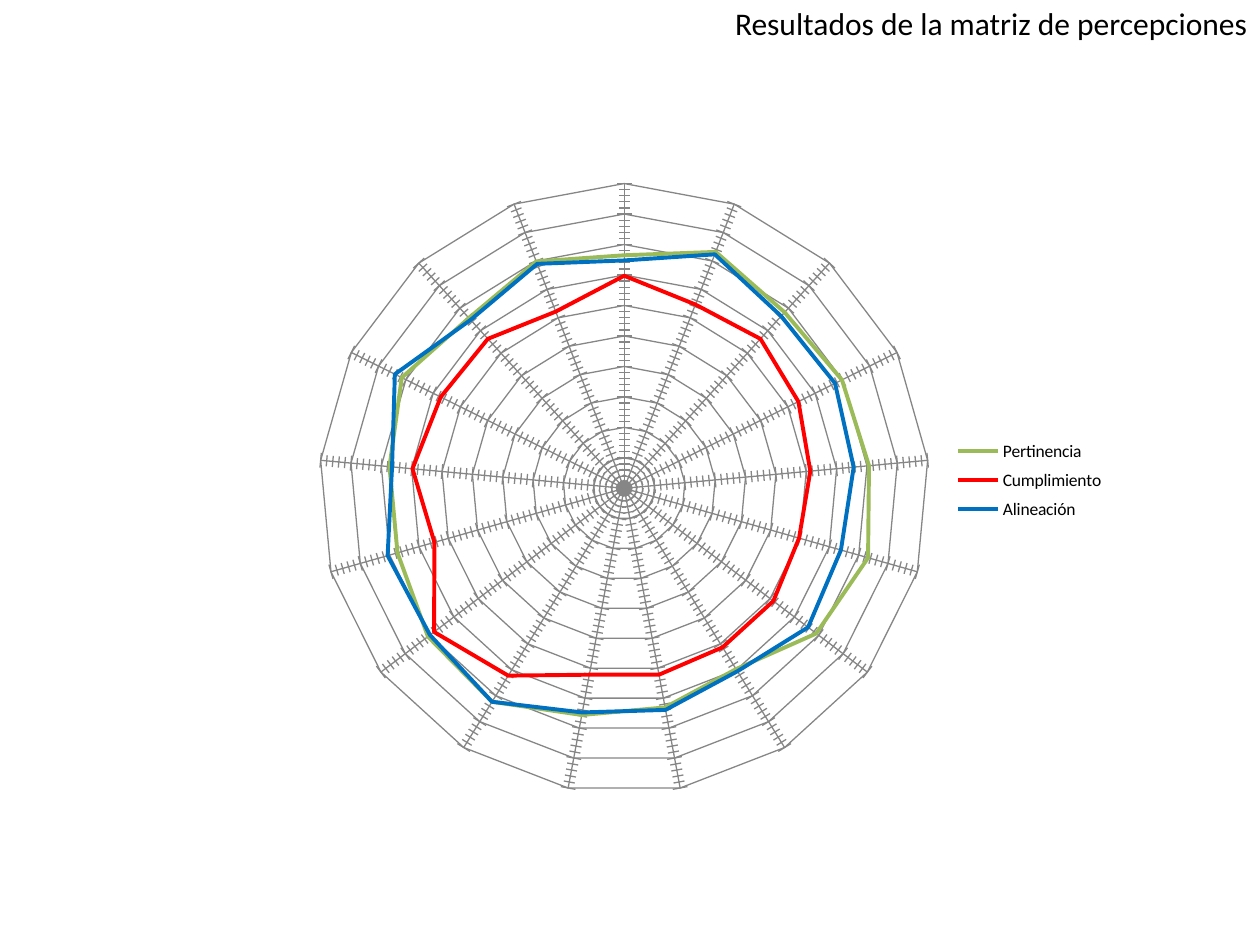
from dataclasses import dataclass

from lxml import etree
from pptx import Presentation
from pptx import util as u
from pptx.chart.data import CategoryChartData
from pptx.dml.color import RGBColor
from pptx.enum import chart as charts, text

WIDTH, HEIGHT = u.Inches(10), u.Inches(7.5)
FONT, BLACK, GRID = "Calibri", "000000", "868686"
MAXIMUM, RINGS, MINOR_PARTS = 119, 10, 5
PLOT_AREA = {"x": 0.212, "y": 0.057, "w": 0.566, "h": 0.935}
LEGEND_AREA = {"x": 0.773, "y": 0.438, "w": 0.14, "h": 0.148}


@dataclass(frozen=True)
class Perception:
    name: str
    color: str
    scores: tuple[int, ...]


PERCEPTIONS = (
    Perception("Alineación", "0070C0",
               (89, 98, 91, 92, 90, 88, 90, 84, 88, 89, 98, 95, 96, 91, 100, 89, 94)),
    Perception("Pertinencia", "9BBB59",
               (91, 99, 93, 95, 96, 99, 94, 83, 87, 90, 98, 96, 92, 92, 97, 90, 95)),
    Perception("Cumplimiento", "FF0000",
               (83, 77, 79, 76, 73, 71, 73, 73, 74, 74, 86, 93, 77, 83, 80, 79, 74)),
)


def rgb(color: str) -> RGBColor:
    return RGBColor.from_string(color)


def percent(left: float, top: float, width: float, height: float) -> tuple[int, ...]:
    return (int(left * WIDTH / 100), int(top * HEIGHT / 100),
            int(width * WIDTH / 100), int(height * HEIGHT / 100))


def style_font(font, size: float) -> None:
    font.name = FONT
    font.size = u.Pt(size)
    font.color.rgb = rgb(BLACK)


def style_line(line, color: str, width: float) -> None:
    line.color.rgb = rgb(color)
    line.width = u.Pt(width)


def place(part, position: int, settings: dict) -> None:
    namespace = etree.QName(part).namespace
    for layout in part.findall(f"{{{namespace}}}layout"):
        part.remove(layout)
    layout = part.makeelement(f"{{{namespace}}}layout")
    part.insert(position, layout)
    manual = etree.SubElement(layout, f"{{{namespace}}}manualLayout")
    for tag, value in settings.items():
        etree.SubElement(manual, f"{{{namespace}}}{tag}").set("val", str(value))


def style_axes(chart) -> None:
    chart.category_axis.visible = False
    chart.category_axis.has_major_gridlines = True
    style_line(chart.category_axis.major_gridlines.format.line, GRID, 0.75)
    axis = chart.value_axis
    axis.minimum_scale, axis.maximum_scale = 0, MAXIMUM
    axis.major_unit = MAXIMUM / RINGS
    axis.minor_unit = axis.major_unit / MINOR_PARTS
    axis.has_major_gridlines = True
    axis.major_tick_mark = axis.minor_tick_mark = charts.XL_TICK_MARK.CROSS
    axis.tick_label_position = charts.XL_TICK_LABEL_POSITION.NONE
    axis.tick_labels.number_format = "#,000;#,000;#,000"
    axis.tick_labels.number_format_is_linked = False
    for part in (axis, axis.major_gridlines):
        style_line(part.format.line, GRID, 0.75)


def draw_last(series) -> None:
    element = series._element
    element.getparent().findall(element.tag)[-1].addnext(element)


def add_radar(page, perceptions: tuple[Perception, ...]) -> None:
    table = CategoryChartData()
    table.categories = [str(n + 1) for n in range(len(perceptions[0].scores))]
    for perception in perceptions:
        table.add_series(perception.name, perception.scores)
    chart = page.shapes.add_chart(
        charts.XL_CHART_TYPE.RADAR, *percent(3.75, 15.5, 92.5, 69), table).chart
    style_font(chart.font, 10)
    chart.has_title = False
    chart.has_legend = True
    chart.legend.position = charts.XL_LEGEND_POSITION.RIGHT
    chart.legend.include_in_layout = False
    style_font(chart.legend.font, 10)
    style_axes(chart)
    edges = {"xMode": "edge", "yMode": "edge"}
    place(chart.element.chart.plotArea, 0, {"layoutTarget": "inner", **edges, **PLOT_AREA})
    place(chart.legend._element, 1, {**edges, **LEGEND_AREA})
    plot = chart.plots[0]
    plot.vary_by_categories = False
    for series, perception in zip(plot.series, perceptions):
        style_line(series.format.line, perception.color, 2.25)
        series.marker.style = charts.XL_MARKER_STYLE.NONE
    draw_last(plot.series[0])


def add_heading(page, wording: str) -> None:
    box = page.shapes.add_textbox(*percent(0, -0.2, 100, 5.4))
    frame = box.text_frame
    frame.word_wrap = True
    frame.auto_size = text.MSO_AUTO_SIZE.SHAPE_TO_FIT_TEXT
    para = frame.paragraphs[0]
    para.text = wording
    para.alignment = text.PP_ALIGN.RIGHT
    style_font(para.font, 18)


def main() -> None:
    deck = Presentation()
    deck.slide_width, deck.slide_height = WIDTH, HEIGHT
    page = deck.slides.add_slide(deck.slide_layouts[6])
    add_radar(page, PERCEPTIONS)
    add_heading(page, "Resultados de la matriz de percepciones")
    deck.save("out.pptx")


if __name__ == "__main__":
    main()
